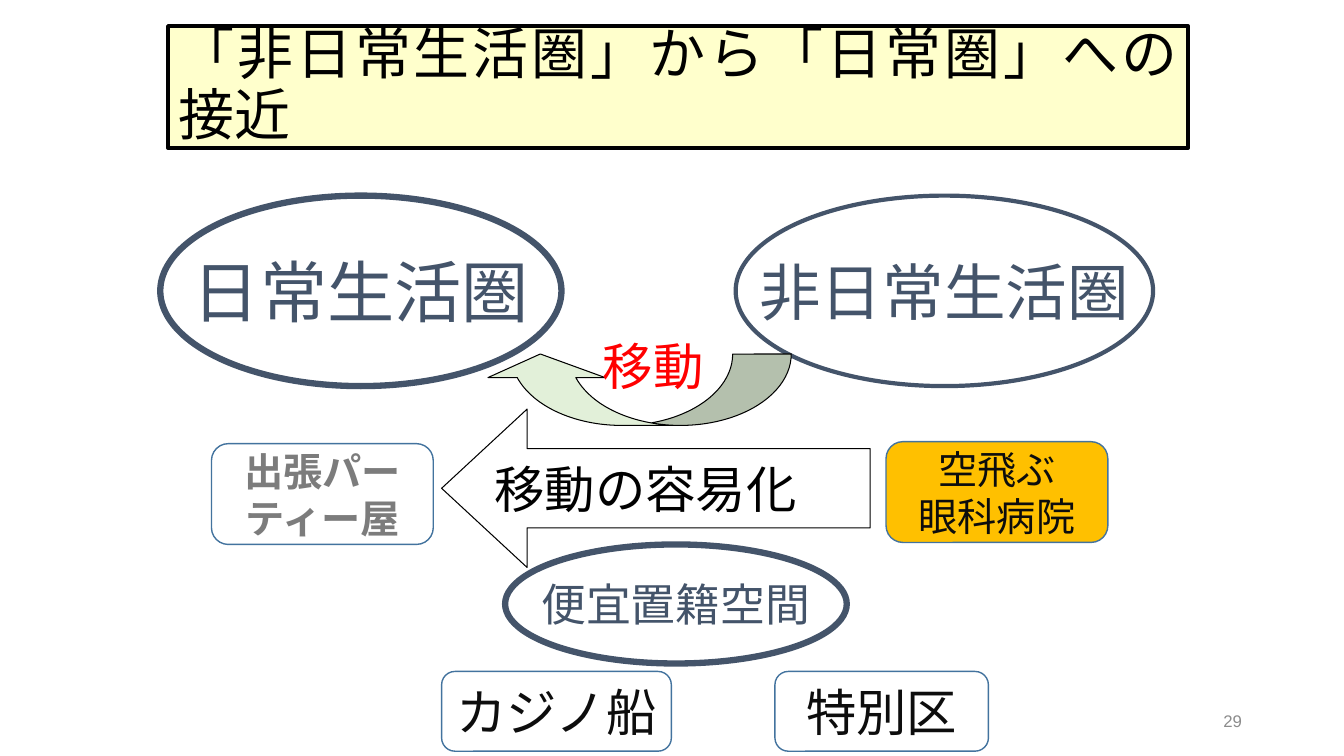
import pptx
import pptx.util
import pptx.dml.color
import pptx.enum.lang
import pptx.enum.shapes
import pptx.enum.text

Cm, Pt = pptx.util.Cm, pptx.util.Pt
SHAPE = pptx.enum.shapes.MSO_SHAPE
ALIGN = pptx.enum.text.PP_ALIGN
ANCHOR = pptx.enum.text.MSO_ANCHOR

COLORS = {
    "black": "000000",
    "white": "FFFFFF",
    "cream": "FFFFCC",
    "slate": "44546A",
    "pale_green": "E2F0D9",
    "red": "FF0000",
    "amber": "FFC000",
    "blue": "43739E",
    "ink": "0D0D0D",
    "gray": "7C7C7C",
    "light_gray": "8C8C8C",
}


def rgb(name):
    return pptx.dml.color.RGBColor.from_string(COLORS[name])


def write(sp, text, size, color, align=ALIGN.CENTER, anchor=ANCHOR.MIDDLE,
          wrap=True, bold=False, font="Calibri", spacing=None):
    tf = sp.text_frame
    tf.text = text
    tf.word_wrap = wrap
    tf.vertical_anchor = anchor
    for p in tf.paragraphs:
        p.alignment = align
        p.line_spacing = spacing
        for r in p.runs:
            r.font.name = font
            r.font.size = Pt(size)
            r.font.bold = bold
            r.font.color.rgb = rgb(color)
            r.font.language_id = pptx.enum.lang.MSO_LANGUAGE_ID.JAPANESE


def add_shape(s, kind, box, line, weight, fill=None):
    sp = s.shapes.add_shape(kind, *map(Cm, box))
    sp.shadow.inherit = False
    if fill:
        sp.fill.solid()
        sp.fill.fore_color.rgb = rgb(fill)
    else:
        sp.fill.background()
    sp.line.color.rgb = rgb(line)
    sp.line.width = Pt(weight)
    return sp


def add_label(s, box, text, size, color, **style):
    write(s.shapes.add_textbox(*map(Cm, box)), text, size, color, **style)


def add_sphere(s, box, text, size, weight):
    sp = add_shape(s, SHAPE.OVAL, box, "slate", weight)
    write(sp, text, size, "slate", wrap=False)


def add_example(s, box, text, size, color="ink", fill=None, bold=False):
    sp = add_shape(s, SHAPE.ROUNDED_RECTANGLE, box, "blue", 1, fill)
    write(sp, text, size, color, bold=bold)


def add_arrow(s, kind, box, fill, adjustments):
    sp = add_shape(s, kind, box, "black", 0.75, fill)
    for i, value in enumerate(adjustments):
        sp.adjustments[i] = value
    return sp


def main():
    prs = pptx.Presentation()
    prs.slide_width, prs.slide_height = Cm(33.87), Cm(19.05)
    s = prs.slides.add_slide(prs.slide_layouts[6])

    # Slide number and title
    add_label(s, (23.93, 17.65, 7.62, 1.02), "29", 12, "light_gray",
              align=ALIGN.RIGHT, font="Arial")
    title = add_shape(s, SHAPE.RECTANGLE, (4.24, 0.66, 25.7, 3.07),
                      "black", 3, "cream")
    write(title, "「非日常生活圏」から「日常圏」への接近", 40, "black",
          align=ALIGN.JUSTIFY, spacing=0.9)

    # The two spheres of life
    add_sphere(s, (4.04, 4.93, 10.11, 4.8), "日常生活圏", 48, 4.5)
    add_sphere(s, (18.54, 4.93, 10.52, 4.8), "非日常生活圏", 44, 3)

    # Movement between them
    curve = add_arrow(s, SHAPE.CURVED_DOWN_ARROW, (12.14, 8.92, 7.8, 1.8),
                      "pale_green", (0.82, 1.64, 0.33))
    curve.rotation = 180
    add_label(s, (14.94, 8.33, 3.05, 1.78), "移動", 36, "red",
              align=ALIGN.LEFT, anchor=ANCHOR.TOP, wrap=False)
    easing = add_arrow(s, SHAPE.LEFT_ARROW, (11.13, 10.31, 10.8, 3.99),
                       "white", (0.5, 0.54))
    write(easing, "移動の容易化", 36, "black", align=ALIGN.LEFT)

    # Space of convenience
    add_sphere(s, (12.73, 13.72, 8.61, 3), "便宜置籍空間", 32, 4.5)

    # Examples
    add_example(s, (22.33, 11.13, 5.59, 2.54), "空飛ぶ\n眼科病院", 28,
                fill="amber")
    add_example(s, (5.33, 11.18, 5.59, 2.54), "出張パーティー屋", 28,
                color="gray", bold=True)
    add_example(s, (11.13, 16.92, 5.79, 2.01), "カジノ船", 36)
    add_example(s, (19.53, 16.92, 5.38, 2.01), "特別区", 36)

    prs.save("out.pptx")


if __name__ == "__main__":
    main()
